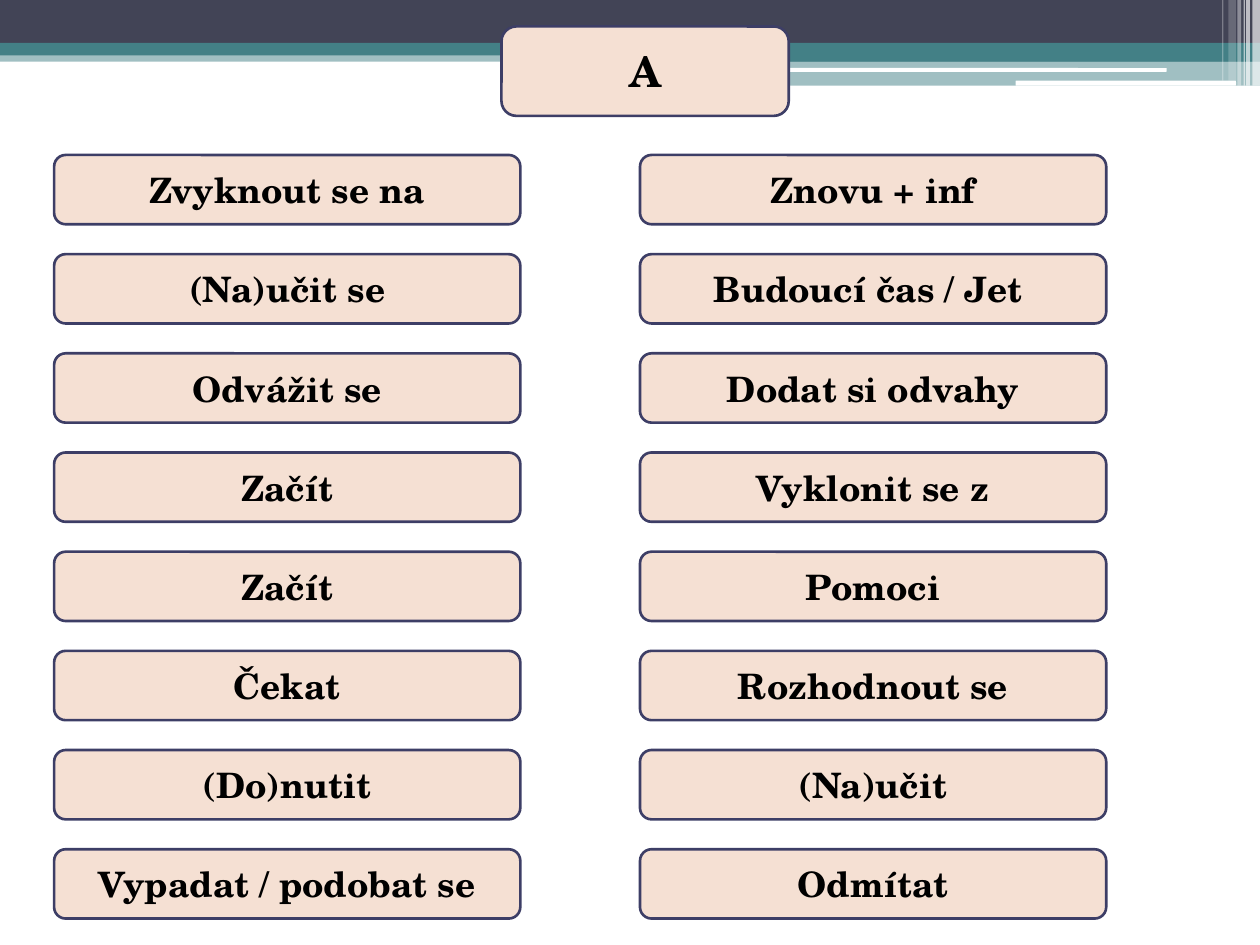
from dataclasses import dataclass

from lxml import etree
from pptx import Presentation
from pptx import util as u
from pptx.dml.color import RGBColor
from pptx.enum import shapes, text
from pptx.oxml import ns


@dataclass(frozen=True)
class Theme:
    font: str = "TeX Gyre Schola"
    ink: str = "000000"
    card: str = "F5E0D3"
    edge: str = "3D3E66"
    navy: str = "424456"
    teal: str = "438086"
    white: str = "FFFFFF"
    head: int = 24
    body: int = 20
    rule: float = 1.5


THEME = Theme()
RECT = shapes.MSO_SHAPE.RECTANGLE
ROUND = shapes.MSO_SHAPE.ROUNDED_RECTANGLE

# left, top, width, height, colour, opacity in percent
BANDS = [
    (0, 0.4, 10, 0.09, THEME.teal, 50),
    (0, 0, 10, 0.34, THEME.navy, 100),
    (0, 0.34, 10, 0.1, THEME.teal, 100),
    (5.92, 0.39, 4.08, 0.1, THEME.teal, 100),
    (5.92, 0.48, 4.08, 0.2, THEME.teal, 50),
]
BARS = [(5.91, 0.54, 3.35, 0.03), (8.06, 0.64, 1.75, 0.04)]
# left, width, height, opacity in percent
STRIPES = [
    (9.94, 0.06, 0.68, 65),
    (9.89, 0.03, 0.68, 65),
    (9.87, 0.01, 0.68, 60),
    (9.82, 0.03, 0.68, 40),
    (9.75, 0.06, 0.64, 20),
    (9.7, 0.01, 0.64, 30),
]

COLUMNS = {
    0.43: ["Zvyknout se na", "(Na)učit se", "Odvážit se", "Začít",
           "Začít", "Čekat", "(Do)nutit", "Vypadat / podobat se"],
    5.08: ["Znovu + inf", "Budoucí čas / Jet ", "Dodat si odvahy",
           "Vyklonit se z", "Pomoci", "Rozhodnout se", "(Na)učit", "Odmítat"],
}
FIRST, LAST = 1.23, 6.74


def add_block(slide, kind, box, fill, alpha=100):
    """Add a filled shape without outline; alpha is opacity in percent."""
    block = slide.shapes.add_shape(kind, *map(u.Inches, box))
    block.shadow.inherit = False
    block.fill.solid()
    block.fill.fore_color.rgb = RGBColor.from_string(fill)
    block.line.fill.background()
    if alpha < 100:
        tint = block.fill._xPr.find(".//" + ns.qn("a:srgbClr"))
        etree.SubElement(tint, ns.qn("a:alpha"), val=str(alpha * 1000))
    return block


def add_card(slide, box, words, size):
    card = add_block(slide, ROUND, box, THEME.card)
    card.line.color.rgb = RGBColor.from_string(THEME.edge)
    card.line.width = u.Pt(THEME.rule)
    frame = card.text_frame
    frame.vertical_anchor = text.MSO_ANCHOR.MIDDLE
    para = frame.paragraphs[0]
    para.alignment = text.PP_ALIGN.CENTER
    run = para.add_run()
    run.text = words
    style = {"name": THEME.font, "size": u.Pt(size), "bold": True}
    for name, value in style.items():
        setattr(run.font, name, value)
    run.font.color.rgb = RGBColor.from_string(THEME.ink)


def add_banner(slide):
    for *box, fill, alpha in BANDS:
        add_block(slide, RECT, box, fill, alpha)
    for box in BARS:
        add_block(slide, ROUND, box, THEME.white)
    for left, width, height, alpha in STRIPES:
        add_block(slide, RECT, (left, 0, width, height), THEME.white, alpha)


def add_column(slide, left, items):
    step = (LAST - FIRST) / (len(items) - 1)
    for row, words in enumerate(items):
        box = (left, FIRST + row * step, 3.7, 0.55)
        add_card(slide, box, words, THEME.body)


def main():
    deck = Presentation()
    deck.slide_width, deck.slide_height = u.Inches(10), u.Inches(7.5)
    slide = deck.slides.add_slide(deck.slide_layouts[6])
    add_banner(slide)
    add_card(slide, (3.98, 0.21, 2.28, 0.71), "A", THEME.head)
    for left, items in COLUMNS.items():
        add_column(slide, left, items)
    deck.save("out.pptx")


if __name__ == "__main__":
    main()
